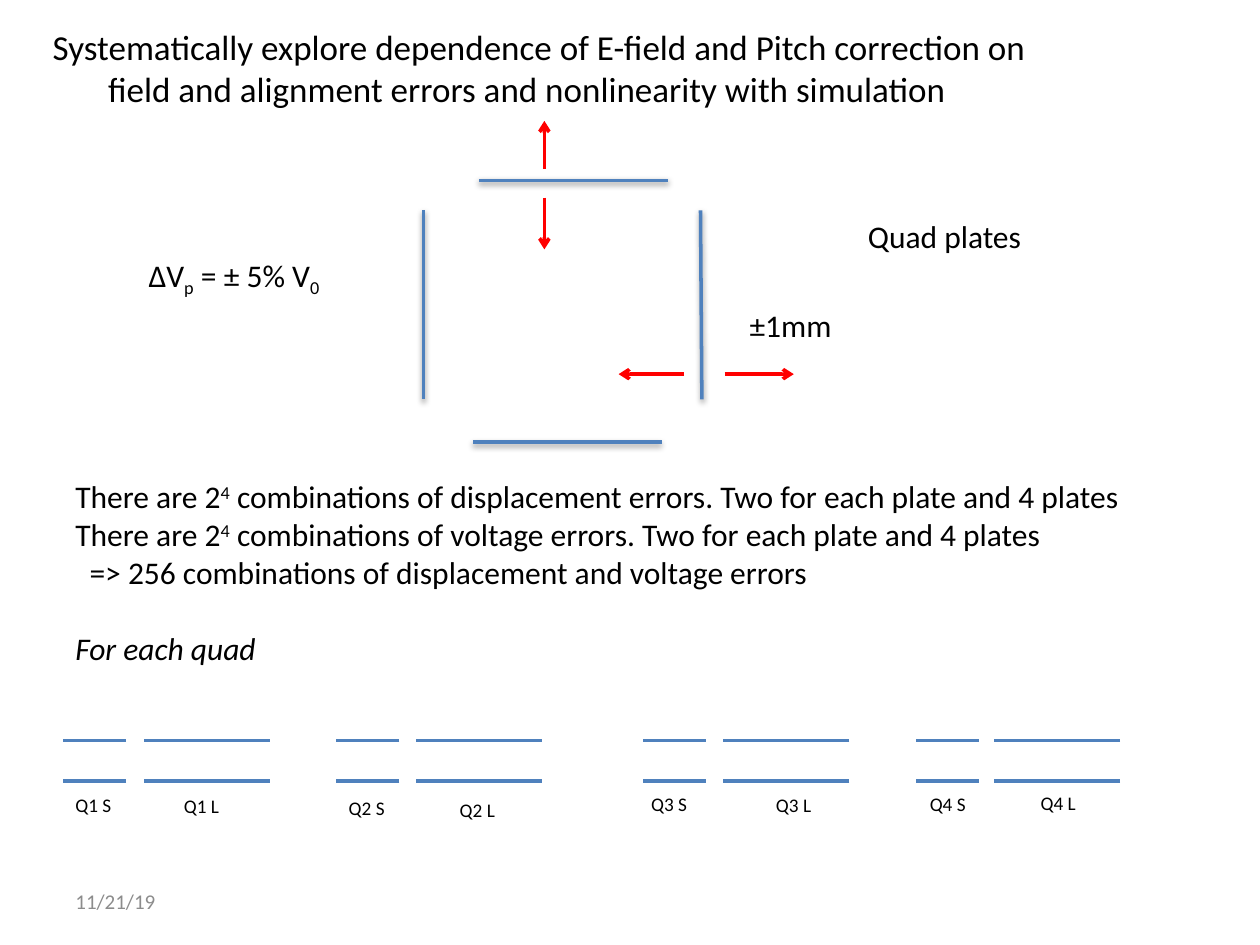
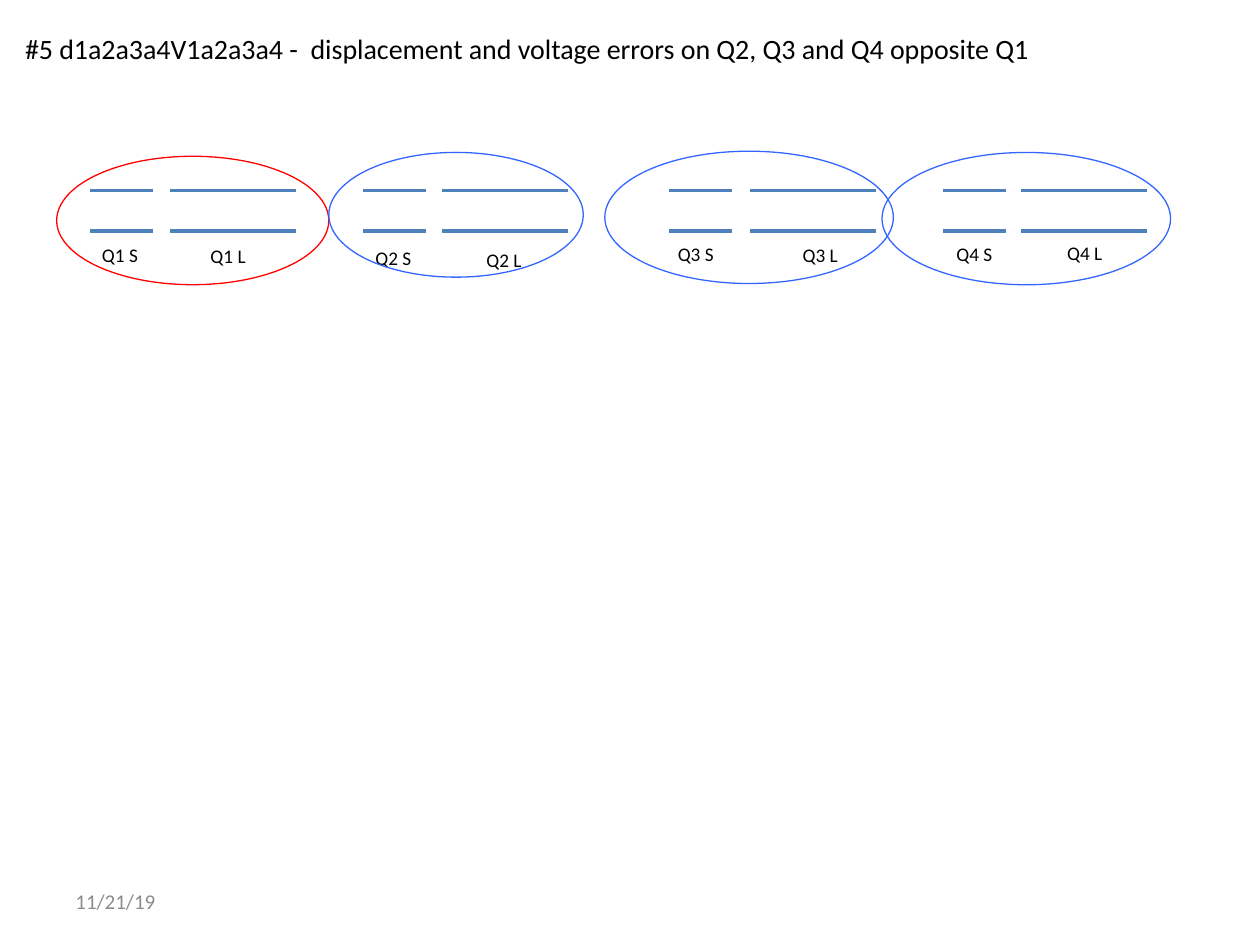
"""Build two slides on quad plate displacement and voltage errors."""
from dataclasses import dataclass

from lxml.etree import SubElement
from pptx import Presentation
from pptx.dml.color import RGBColor
from pptx.enum.shapes import MSO_CONNECTOR as Connector, MSO_SHAPE as Shape
from pptx.enum.text import MSO_ANCHOR as Anchor, MSO_AUTO_SIZE as AutoSize
from pptx.oxml.ns import qn
from pptx.util import Pt

FONT = "Calibri"
BLACK, GREY = "000000", "8C8C8C"
PLATE, RED, BLUE = "4F81BD", "FF0000", "3366FF"
SHORT, LONG, GAP = 36, 72, 23


@dataclass
class Line:
    """One paragraph, made of (text, baseline percent) spans."""
    spans: list
    indent: float = 0
    before: float = 0
    italic: bool = False


@dataclass
class Quad:
    """Offsets of a quad's plates and labels within its row."""
    name: str
    short_x: float
    long_x: float
    short_label: tuple
    long_label: tuple


QUADS = [
    Quad("Q1", 0, 46.1, (0, 26.6), (62, 27.4)),
    Quad("Q2", 156.2, 201.6, (156.2, 28), (219.6, 29.5)),
    Quad("Q3", 331.2, 377.3, (329, 26), (400.3, 26.6)),
    Quad("Q4", 487.4, 532.1, (488.2, 26), (551.5, 25.2)),
]


def rgb(value):
    """Turn a hex string into a colour."""
    return RGBColor.from_string(value)


def points(values):
    """Turn numbers into lengths in points."""
    return [Pt(value) for value in values]


def add_text(page, box, *lines, size=18, color=BLACK, wrap=False,
             anchor=Anchor.TOP, grow=True):
    """Place a text box holding plain strings or Line paragraphs."""
    frame = page.shapes.add_textbox(*points(box)).text_frame
    frame.word_wrap = wrap
    frame.auto_size = AutoSize.SHAPE_TO_FIT_TEXT if grow else AutoSize.NONE
    frame.vertical_anchor = anchor
    for index, line in enumerate(lines):
        if isinstance(line, str):
            line = Line([(line, 0)])
        para = frame.add_paragraph() if index else frame.paragraphs[0]
        if line.indent:
            para._p.get_or_add_pPr().set("marL", str(Pt(line.indent)))
        if line.before:
            para.space_before = Pt(line.before)
        for text, baseline in line.spans:
            span = para.add_run()
            span.text = text
            span.font.name = FONT
            span.font.size = Pt(size)
            span.font.color.rgb = rgb(color)
            if line.italic:
                span.font.italic = True
            if baseline:
                span.font._element.set("baseline", str(baseline * 1000))


def add_line(page, start, end, color=PLATE, arrow=False, shadow=False):
    """Draw a straight line with an optional arrowhead or soft shadow."""
    line = page.shapes.add_connector(Connector.STRAIGHT, *points(start + end))
    line.line.color.rgb = rgb(color)
    line.line.width = Pt(2)
    if arrow:
        SubElement(line.line._get_or_add_ln(), qn("a:tailEnd"), type="arrow")
    effects = SubElement(line._element.spPr, qn("a:effectLst"))
    if shadow:
        outer = SubElement(effects, qn("a:outerShdw"), blurRad="40000",
                           dist="20000", dir="5400000", rotWithShape="0")
        tint = SubElement(outer, qn("a:srgbClr"), val=BLACK)
        SubElement(tint, qn("a:alpha"), val="38000")


def add_ring(page, box, color):
    """Draw an unfilled ellipse."""
    ring = page.shapes.add_shape(Shape.OVAL, *points(box))
    ring.shadow.inherit = False
    ring.fill.background()
    ring.line.color.rgb = rgb(color)
    ring.line.width = Pt(0.75)


def add_date(page):
    """Place the date footer."""
    add_text(page, (36, 500.5, 168, 28.8), "11/21/19", size=12, color=GREY,
             wrap=True, anchor=Anchor.MIDDLE, grow=False)


def add_cross_section(page, left, top):
    """Draw the four plates, their displacement arrows and the labels."""
    plates = [((164.1, 51.1), (164.1, 159.1)), ((322.5, 51.1), (323.3, 159.1)),
              ((303.8, 34), (195.8, 34)), ((300.2, 183.6), (192.2, 183.6))]
    arrows = [((336.2, 144.7), (375.8, 144.7)), ((313.2, 144.7), (275.7, 144.7)),
              ((233.3, 27.4), (233.3, 0)), ((233.3, 43.9), (233.3, 73.4))]

    def shift(point):
        return left + point[0], top + point[1]

    for start, end in plates:
        add_line(page, shift(start), shift(end), shadow=True)
    for start, end in arrows:
        add_line(page, shift(start), shift(end), color=RED, arrow=True)
    add_text(page, shift((411.1, 51.1)) + (103.7, 29), "Quad plates")
    add_text(page, shift((343.4, 102.3)) + (62, 29), "±1mm")
    add_text(page, shift((0, 73.4)) + (114.5, 29),
             Line([("ΔV", 0), ("p", -25), (" = ± 5% V", 0), ("0", -25)]))


def add_quad_row(page, left, top):
    """Draw the short and long plate pairs of all quads with labels."""
    for quad in QUADS:
        for suffix, x, width, label in (
                ("S", quad.short_x, SHORT, quad.short_label),
                ("L", quad.long_x, LONG, quad.long_label)):
            for y in (top, top + GAP):
                add_line(page, (left + x + width, y), (left + x, y))
            add_text(page, (left + label[0], top + label[1], 35, 20.6),
                     f"{quad.name} {suffix}", size=11)


def add_rings(page, left, top):
    """Circle each quad of a row, the first one in red."""
    rings = [(-18.8, -19.4, 155.5, 73.4), (136.7, -21.6, 145.4, 71.3),
             (294.4, -22.3, 164.9, 75.6), (452.8, -21.6, 164.9, 75.6)]
    for index, (x, y, width, height) in enumerate(rings):
        add_ring(page, (left + x, top + y, width, height),
                 BLUE if index else RED)


def add_combinations(page, left, top):
    """List the number of error combinations."""
    counts = [Line([("There are 2", 0), ("4", 30),
                    (f" combinations of {kind} errors. "
                     "Two for each plate and 4 plates", 0)])
              for kind in ("displacement", "voltage")]
    add_text(page, (left, top, 621.4, 116.6), *counts,
             Line([("=> 256 combinations of displacement and voltage errors", 0)],
                  indent=8.1),
             Line([("For each quad", 0)], before=22, italic=True))


def build_overview(page):
    """Fill the slide that introduces the error study."""
    add_text(page, (23, 10.8, 661, 79.9),
             "Systematically explore dependence of E-field and Pitch correction on",
             Line([("field and alignment errors and nonlinearity with simulation", 0)],
                  indent=31.7),
             size=20, wrap=True)
    add_cross_section(page, 77.8, 69.1)
    add_combinations(page, 36, 269.3)
    add_quad_row(page, 36, 423.2)
    add_date(page)


def build_case(page):
    """Fill the slide that shows one error combination."""
    add_text(page, (7.2, 14.4, 597, 26.6),
             "#5 d1a2a3a4V1a2a3a4 -  displacement and voltage errors "
             "on Q2, Q3 and Q4 opposite Q1", size=16)
    add_quad_row(page, 51.2, 108.9)
    add_rings(page, 51.2, 108.7)
    add_date(page)


def main():
    """Build and save the deck."""
    deck = Presentation()
    deck.slide_width, deck.slide_height = Pt(720), Pt(540)
    for build in (build_overview, build_case):
        build(deck.slides.add_slide(deck.slide_layouts[6]))
    deck.save("out.pptx")


if __name__ == "__main__":
    main()
